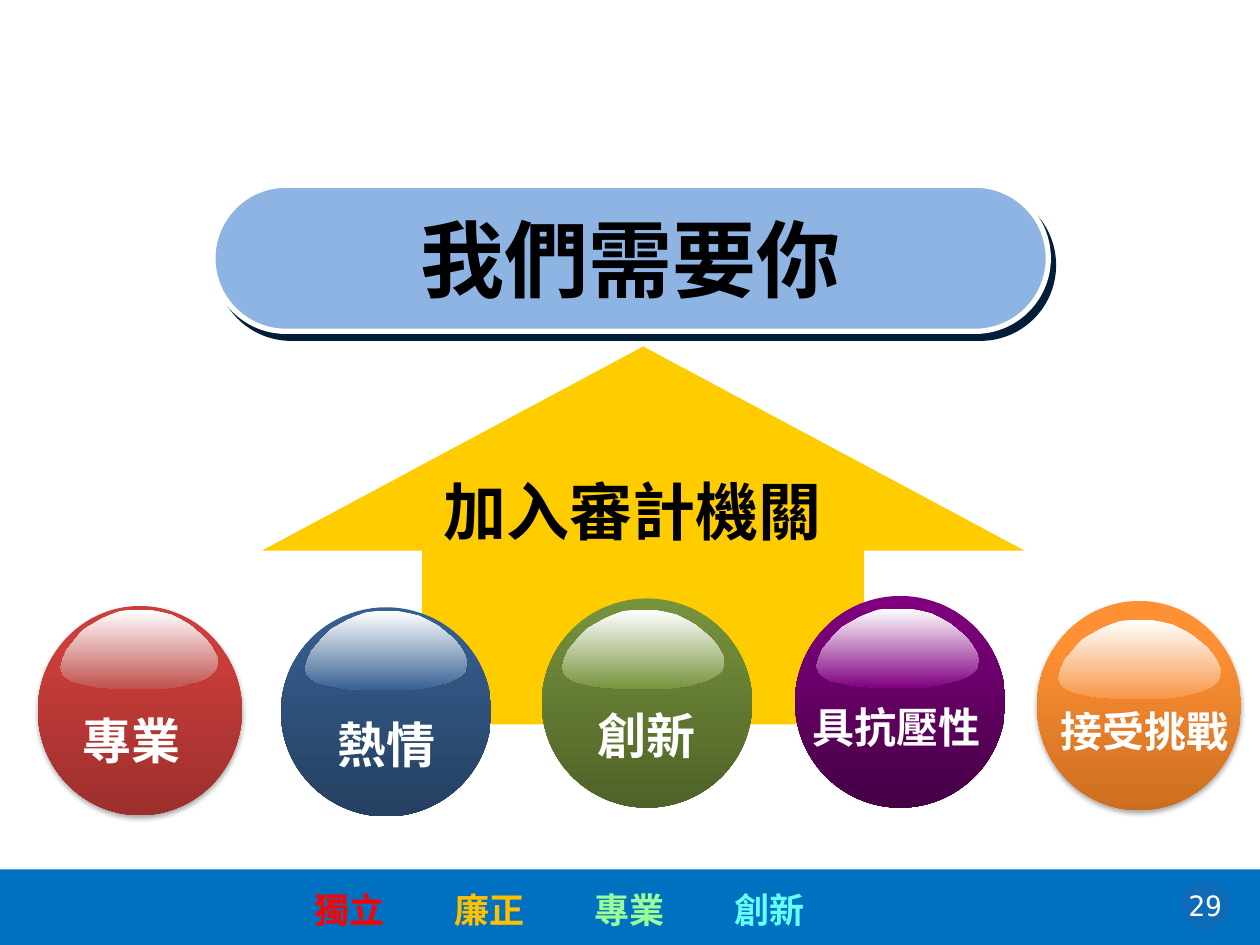
from dataclasses import dataclass

from lxml.etree import SubElement
from pptx import Presentation
from pptx.dml.color import RGBColor
from pptx.enum.shapes import MSO_SHAPE
from pptx.enum.text import MSO_ANCHOR, PP_ALIGN
from pptx.oxml.ns import qn
from pptx.util import Inches, Pt


@dataclass(frozen=True)
class Theme:
    white: str = "FFFFFF"
    black: str = "000000"
    footer: str = "0070C0"
    badge: str = "2A62A8"
    arrow: str = "FFCC00"
    banner: str = "8EB4E3"
    banner_shadow: str = "001D3A"
    heading: int = 48
    subheading: int = 36
    value: int = 20
    page: int = 16
    heading_font: str = "Noto Sans CJK JP"
    body_font: str = "Noto Sans CJK SC"
    page_font: str = "DejaVu Sans Mono"


@dataclass(frozen=True)
class Box:
    x: float
    y: float
    w: float
    h: float

    def emu(self) -> tuple:
        return tuple(Inches(v) for v in (self.x, self.y, self.w, self.h))


@dataclass(frozen=True)
class Shadow:
    color: str
    alpha: int
    blur: float
    dist: float
    angle: int


@dataclass(frozen=True)
class Orb:
    label: str
    size: int
    ball: Box
    gloss: Box
    text: Box
    top: str
    bottom: str
    tint: str
    start: float = 0
    shadow: Shadow | None = None


T = Theme()
SOFT = Shadow(T.black, 35, 3.1, 1.8, 90)

ORBS = [
    Orb("專業", 28, Box(0.3, 4.81, 1.62, 1.66), Box(0.48, 4.84, 1.25, 0.63),
        Box(0.55, 5.59, 0.99, 0.57), "CB3E3A", "9C2F2D", "C0504D", 0.2, SOFT),
    Orb("具抗壓性", 24, Box(6.31, 4.73, 1.67, 1.68), Box(6.48, 4.83, 1.29, 0.63),
        Box(6.34, 5.52, 1.55, 0.5), "800080", "450045", "800080"),
    Orb("熱情", 28, Box(2.23, 4.82, 1.67, 1.66), Box(2.42, 4.85, 1.29, 0.63),
        Box(2.32, 5.62, 1.5, 0.57), "376092", "254061", "376092"),
    Orb("創新", 28, Box(4.3, 4.75, 1.67, 1.66), Box(4.46, 4.84, 1.29, 0.63),
        Box(4.38, 5.55, 1.5, 0.57), "77933C", "4F6228", "77933C"),
    Orb("接受挑戰", 24, Box(8.23, 4.77, 1.62, 1.66), Box(8.4, 4.92, 1.29, 0.63),
        Box(8.31, 5.55, 1.55, 0.5), "FF9034", "CC6E20", "F79646", 0.2, SOFT),
]

VALUES = [("獨立", "FF0000"), ("廉正", "FFC000"), ("專業", "99FF99"), ("創新", "66FFFF")]
VALUE_LEFT, VALUE_PITCH = 2.5, 1.11

GLOSS = [
    (127, 35), (129, 39), (129, 42), (128, 45), (127, 48), (124, 51), (121, 53),
    (117, 55), (112, 57), (107, 58), (101, 60), (95, 61), (88, 62), (81, 63),
    (47, 63), (40, 62), (34, 62), (29, 61), (23, 60), (19, 59), (14, 58),
    (10, 57), (7, 55), (4, 53), (2, 51), (1, 48), (0, 46), (1, 43), (2, 39),
    (5, 32), (10, 26), (15, 20), (20, 15), (27, 11), (34, 7), (41, 4), (49, 1),
    (57, 0), (65, 0), (74, 0), (83, 2), (91, 4), (99, 8), (106, 12), (112, 17),
    (118, 22), (123, 28),
]


def rgb(color: str) -> RGBColor:
    return RGBColor.from_string(color)


def style(r, font: str, size: int, color: str, bold: bool = True) -> None:
    r.font.name = font
    r.font.size = Pt(size)
    r.font.bold = bold
    r.font.color.rgb = rgb(color)
    SubElement(r.font._element, qn("a:ea")).set("typeface", font)


def write(sp, text: str, font: str, size: int, color: str,
          align=PP_ALIGN.CENTER, wrap: bool = False, bold: bool = True) -> None:
    tf = sp.text_frame
    tf.text = text
    tf.word_wrap = wrap
    p = tf.paragraphs[0]
    p.alignment = align
    style(p.runs[0], font, size, color, bold)


def paint(sp, color: str) -> None:
    sp.shadow.inherit = False
    sp.line.fill.background()
    sp.fill.solid()
    sp.fill.fore_color.rgb = rgb(color)


def shade(sp, top: str, bottom: str, start: float = 0) -> None:
    sp.shadow.inherit = False
    sp.line.fill.background()
    sp.fill.gradient()
    sp.fill.gradient_angle = 270
    for stop, color, pos in zip(sp.fill.gradient_stops, (top, bottom), (start, 1)):
        stop.color.rgb = rgb(color)
        stop.position = pos


def cast(sp, shadow: Shadow) -> None:
    effects = sp._element.spPr.find(qn("a:effectLst"))
    outer = SubElement(effects, qn("a:outerShdw"), blurRad=str(Pt(shadow.blur)),
                       dist=str(Pt(shadow.dist)), dir=str(shadow.angle * 60000),
                       algn="ctr", rotWithShape="0")
    color = SubElement(outer, qn("a:srgbClr"), val=shadow.color)
    SubElement(color, qn("a:alpha"), val=str(shadow.alpha * 1000))


def add_shape(s, kind, box: Box, color: str):
    sp = s.shapes.add_shape(kind, *box.emu())
    paint(sp, color)
    return sp


def add_orb(s, orb: Orb) -> None:
    ball = s.shapes.add_shape(MSO_SHAPE.OVAL, *orb.ball.emu())
    shade(ball, orb.top, orb.bottom, orb.start)
    if orb.shadow:
        cast(ball, orb.shadow)
    fb = s.shapes.build_freeform(*GLOSS[0], scale=Inches(0.01))
    fb.add_line_segments(GLOSS[1:], close=True)
    gloss = fb.convert_to_shape()
    gloss.left, gloss.top, gloss.width, gloss.height = orb.gloss.emu()
    shade(gloss, T.white, orb.tint)
    write(s.shapes.add_textbox(*orb.text.emu()), orb.label, T.body_font, orb.size, T.white)


def add_footer(s) -> None:
    add_shape(s, MSO_SHAPE.RECTANGLE, Box(0, 6.9, 10, 0.6), T.footer)
    badge = add_shape(s, MSO_SHAPE.OVAL, Box(9.37, 6.99, 0.39, 0.39), T.badge)
    color = badge._element.spPr.find(qn("a:solidFill"))[0]
    SubElement(color, qn("a:alpha"), val="35000")
    write(s.shapes.add_textbox(*Box(9.21, 7, 0.71, 0.37).emu()), "29",
          T.page_font, T.page, T.white, wrap=True, bold=False)
    tf = s.shapes.add_textbox(*Box(0, 7, 10, 0.44).emu()).text_frame
    tf.word_wrap = True
    tf.margin_left = Inches(VALUE_LEFT)
    p = tf.paragraphs[0]
    tabs = SubElement(p._p.get_or_add_pPr(), qn("a:tabLst"))
    for i, (word, color) in enumerate(VALUES):
        if i:
            SubElement(tabs, qn("a:tab"), pos=str(Inches(i * VALUE_PITCH)), algn="l")
        r = p.add_run()
        r.text = "\t" + word if i else word
        style(r, T.body_font, T.value, color)


def main() -> None:
    prs = Presentation()
    prs.slide_width, prs.slide_height = Inches(10), Inches(7.5)
    s = prs.slides.add_slide(prs.slide_layouts[6])
    add_footer(s)

    arrow = add_shape(s, MSO_SHAPE.UP_ARROW, Box(2.08, 2.75, 6.05, 3), T.arrow)
    arrow.adjustments[0], arrow.adjustments[1] = 0.58, 0.54
    write(s.shapes.add_textbox(*Box(3.42, 3.7, 4.18, 0.55).emu()), "加入審計機關",
          T.heading_font, T.subheading, T.black, PP_ALIGN.LEFT, True)

    banner = add_shape(s, MSO_SHAPE.ROUNDED_RECTANGLE, Box(1.69, 1.47, 6.63, 1.16), T.banner)
    banner.adjustments[0] = 0.5
    banner.line.color.rgb = rgb(T.white)
    banner.line.width = Pt(3)
    cast(banner, Shadow(T.banner_shadow, 100, 0, 5, 53))
    write(banner, "我們需要你", T.heading_font, T.heading, T.black)
    banner.text_frame.vertical_anchor = MSO_ANCHOR.MIDDLE

    for orb in ORBS:
        add_orb(s, orb)
    prs.save("out.pptx")


if __name__ == "__main__":
    main()
